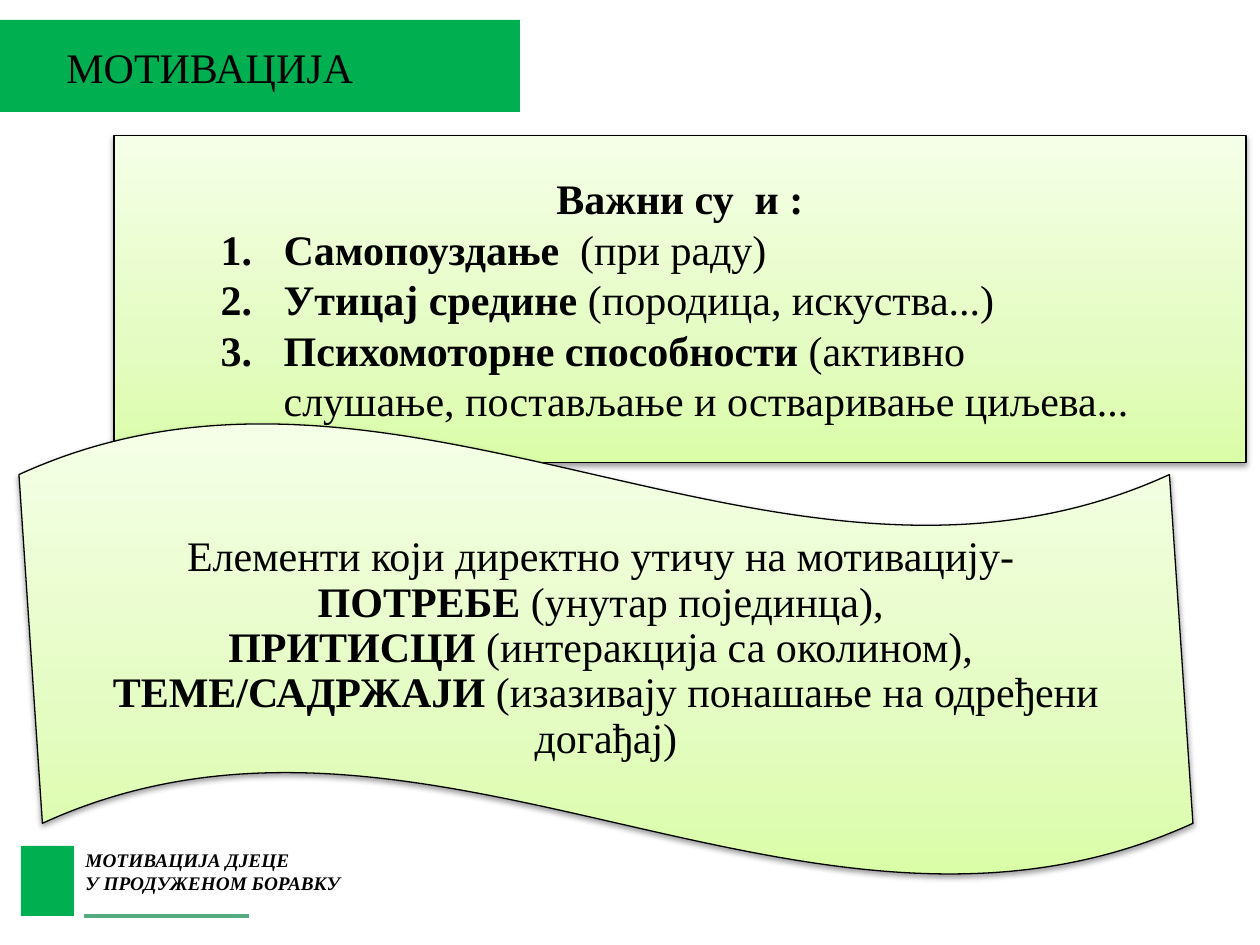
from lxml import etree
from pptx import Presentation
from pptx.dml.color import RGBColor
from pptx.enum.shapes import MSO_CONNECTOR, MSO_SHAPE
from pptx.enum.text import MSO_ANCHOR, MSO_AUTO_SIZE, PP_ALIGN
from pptx.oxml import parse_xml
from pptx.oxml.ns import nsdecls, qn
from pptx.util import Emu, Pt

PX = 914400 / 126
FONT = "Times New Roman"
GREEN, BLACK, RULE_GREEN = "00B050", "000000", "54AB80"
RECT, HEXAGON, WAVE = MSO_SHAPE.RECTANGLE, MSO_SHAPE.HEXAGON, MSO_SHAPE.WAVE
CENTER, LEFT = PP_ALIGN.CENTER, PP_ALIGN.LEFT
MIDDLE, GROW = MSO_ANCHOR.MIDDLE, MSO_AUTO_SIZE.SHAPE_TO_FIT_TEXT
STRAIGHT = MSO_CONNECTOR.STRAIGHT

TITLE = [("", "МОТИВАЦИЈА")]
FOOTER = [("МОТИВАЦИЈА ДЈЕЦЕ", ""), ("У ПРОДУЖЕНОМ БОРАВКУ", "")]
FACTORS = [
    ("Важни су  и :", ""),
    ("Самопоуздање  ", "(при раду)"),
    ("Утицај средине ", "(породица, искуства...)"),
    ("Психомоторне способности ",
     "(активно слушање, постављање и остваривање циљева..."),
]
ELEMENTS = [
    ("", "Елементи који директно утичу на мотивацију- "),
    ("ПОТРЕБЕ", " (унутар појединца), "),
    ("ПРИТИСЦИ", " (интеракција са околином), "),
    ("ТЕМЕ/САДРЖАЈИ ", "(изазивају понашање на одређени догађај)"),
]
GREEN_BARS = [(21, 846, 53, 70), (0, 20, 520, 92)]
GRADIENT = [(0, "DAFDA7"), (35, "E4FCC2"), (100, "F5FFE7")]


def px(*lengths):
    return [Emu(round(length * PX)) for length in lengths]


def color(value):
    return RGBColor.from_string(value)


def write(frame, lines, size=24, italic=False, align=LEFT, spacing=None):
    frame.word_wrap = True
    for index, line in enumerate(lines):
        paragraph = frame.paragraphs[0] if index == 0 else frame.add_paragraph()
        paragraph.alignment = align
        if spacing:
            paragraph.line_spacing = spacing
        for words, bold in zip(line, (True, False)):
            if words:
                run = paragraph.add_run()
                run.text = words
                run.font.name, run.font.size = FONT, Pt(size)
                run.font.bold, run.font.italic = bold, italic
                run.font.color.rgb = color(BLACK)


def number(paragraph):
    paragraph.alignment = LEFT
    properties = paragraph._p.get_or_add_pPr()
    indent = px(63)[0]
    properties.set("marL", str(indent))
    properties.set("indent", str(-indent))
    etree.SubElement(properties, qn("a:buFont"), typeface="+mj-lt")
    etree.SubElement(properties, qn("a:buAutoNum"), type="arabicPeriod")


def add_caption(box, lines, **style):
    caption = slide.shapes.add_textbox(*px(*box)).text_frame
    write(caption, lines, **style)
    caption.auto_size = GROW


def add_panel(kind, box, adjustments, lines, **style):
    panel = slide.shapes.add_shape(kind, *px(*box))
    for index, value in enumerate(adjustments):
        panel.adjustments[index] = value
    panel.line.color.rgb = color(BLACK)
    panel.line.width = Pt(0.75)
    panel.shadow.inherit = False
    panel.fill.gradient()
    properties = panel._element.spPr
    stops = "".join(
        f'<a:gs pos="{place * 1000}"><a:srgbClr val="{tint}"/></a:gs>'
        for place, tint in GRADIENT)
    properties.replace(properties.find(qn("a:gradFill")), parse_xml(
        f'<a:gradFill {nsdecls("a")} rotWithShape="1"><a:gsLst>{stops}</a:gsLst>'
        '<a:lin ang="16200000" scaled="0"/></a:gradFill>'))
    properties.find(qn("a:effectLst")).append(parse_xml(
        f'<a:outerShdw {nsdecls("a")} blurRad="40000" dist="20000" dir="5400000" '
        'rotWithShape="0"><a:srgbClr val="000000"><a:alpha val="38000"/>'
        '</a:srgbClr></a:outerShdw>'))
    panel.text_frame.vertical_anchor = MIDDLE
    write(panel.text_frame, lines, align=CENTER, **style)
    return panel


deck = Presentation()
deck.slide_width, deck.slide_height = px(1260, 945)
slide = deck.slides.add_slide(deck.slide_layouts[6])

rule = slide.shapes.add_connector(STRAIGHT, *px(84, 916, 249, 916))
rule.line.color.rgb = color(RULE_GREEN)
rule.line.width = Pt(2.25)
etree.SubElement(rule._element.spPr, qn("a:effectLst"))

add_caption((73, 842, 472, 59), FOOTER, size=11, italic=True)
for box in GREEN_BARS:
    bar = slide.shapes.add_shape(RECT, *px(*box))
    bar.shadow.inherit = False
    bar.fill.solid()
    bar.fill.fore_color.rgb = color(GREEN)
    bar.line.fill.background()
add_caption((54, 35, 318, 63), TITLE)

factors = add_panel(HEXAGON, (114, 135, 1132, 328), (0, 1.15), FACTORS)
for factor in factors.text_frame.paragraphs[1:]:
    number(factor)
add_panel(WAVE, (19, 422, 1174, 454), (0.116, 0.01), ELEMENTS, spacing=0.9)

deck.save("out.pptx")
